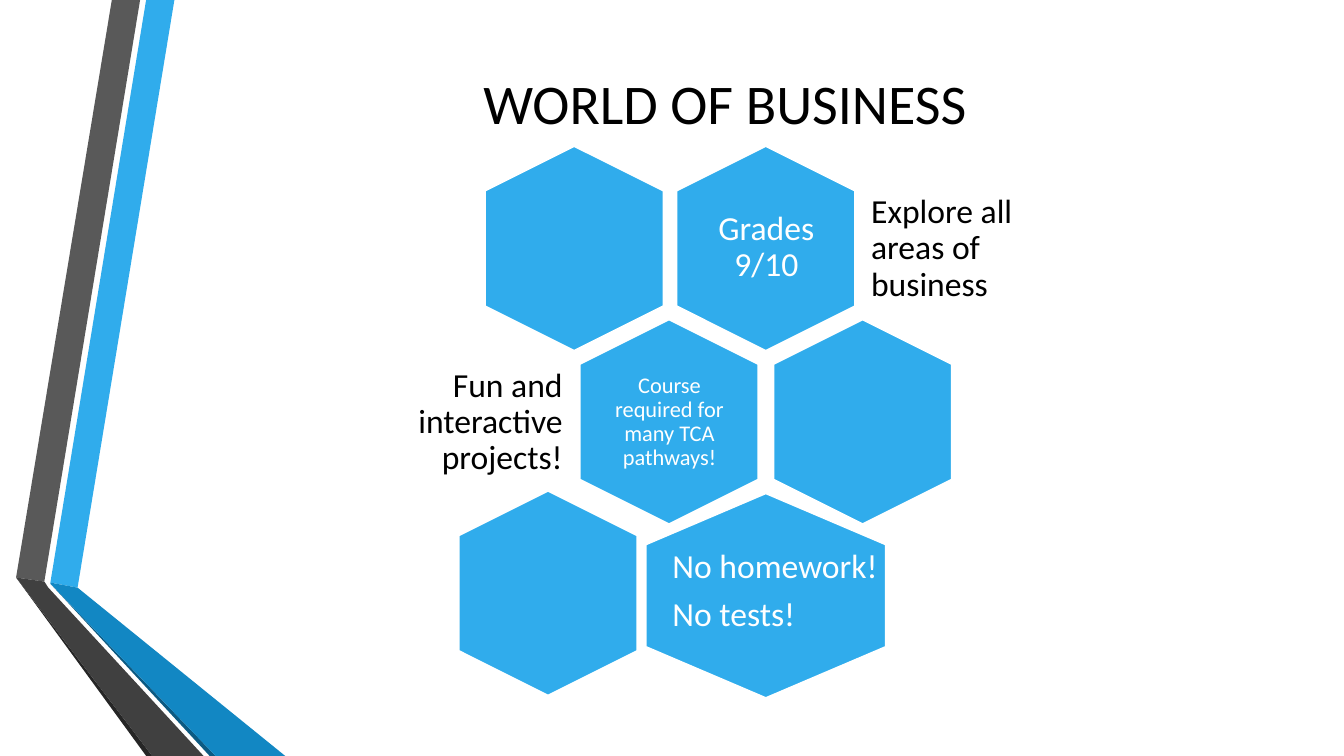
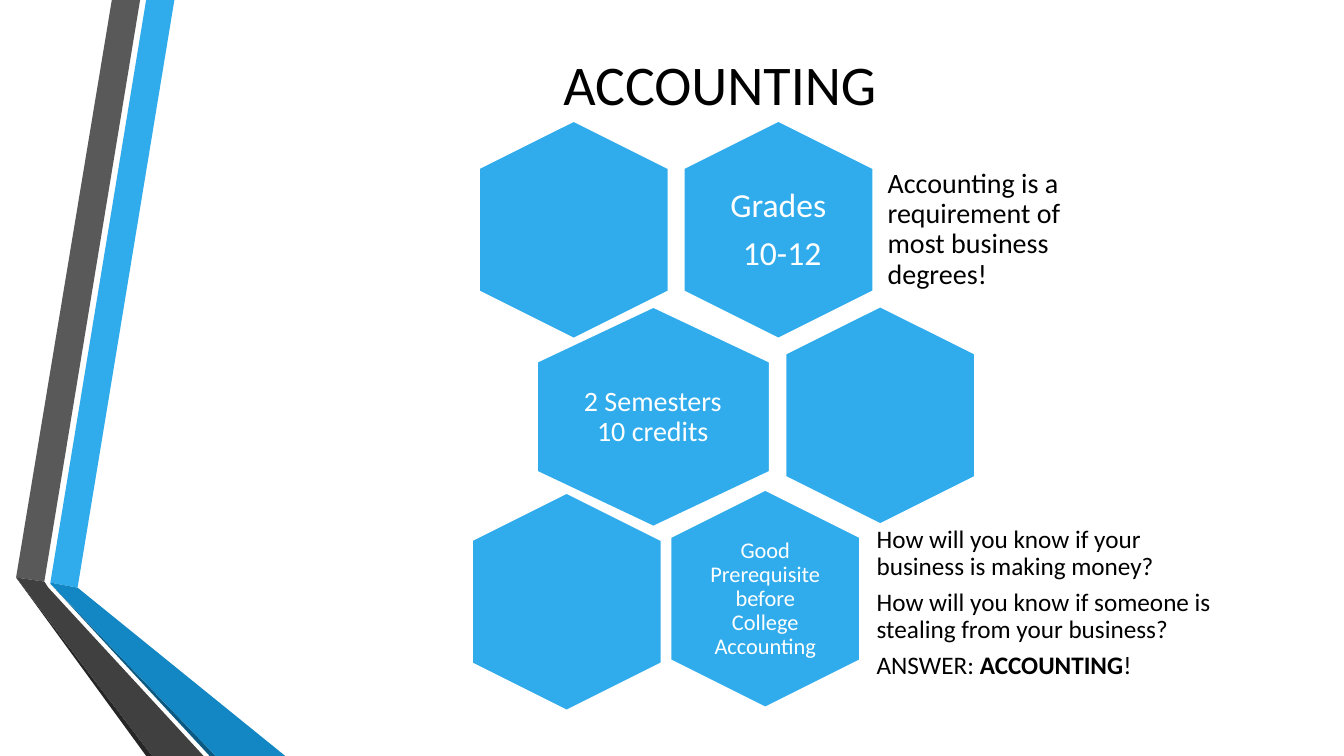
from dataclasses import dataclass

from pptx import Presentation
from pptx.dml.color import RGBColor
from pptx.enum.shapes import MSO_SHAPE as Preset
from pptx.enum.text import MSO_ANCHOR as Anchor, PP_ALIGN as Align
from pptx.shapes.autoshape import Shape
from pptx.slide import Slide
from pptx.util import Emu, Pt

PX = 9144  # EMU per px, 100 px to the inch
FONT = "Calibri"
TITLE_SIZE = 40
LABEL_SHARE = 0.69  # part of a hexagon that its label fills

BLACK = RGBColor(0x00, 0x00, 0x00)
WHITE = RGBColor(0xFF, 0xFF, 0xFF)
BLUE = RGBColor(0x30, 0xAC, 0xEC)
MID_BLUE = RGBColor(0x12, 0x87, 0xC3)
DEEP_BLUE = RGBColor(0x0C, 0x5A, 0x82)
GRAY = RGBColor(0x59, 0x59, 0x59)
DARK_GRAY = RGBColor(0x40, 0x40, 0x40)
CHARCOAL = RGBColor(0x26, 0x26, 0x26)


@dataclass(frozen=True)
class Box:
    left: int
    top: int
    width: int
    height: int

    def emu(self) -> tuple[Emu, Emu, Emu, Emu]:
        return (Emu(self.left * PX), Emu(self.top * PX),
                Emu(self.width * PX), Emu(self.height * PX))


@dataclass(frozen=True)
class Band:
    color: RGBColor
    points: tuple[tuple[int, int], ...]


@dataclass(frozen=True)
class Hexagon:
    center_x: int
    center_y: int
    width: int
    height: int
    label: tuple[str, ...] = ()
    size: int = 24


@dataclass(frozen=True)
class Note:
    box: Box
    paragraphs: tuple[str, ...]
    size: int = 24
    align: Align = Align.LEFT
    color: RGBColor = BLACK
    bold_word: str = ""


@dataclass(frozen=True)
class Page:
    title: str
    title_box: Box
    hexagons: tuple[Hexagon, ...]
    notes: tuple[Note, ...]


# Folded ribbons at the left edge
BANDS = (
    Band(BLUE, ((50, 578), (77, 583), (173, 0), (145, 0))),
    Band(GRAY, ((139, 0), (111, 0), (16, 573), (44, 577))),
    Band(CHARCOAL, ((16, 573), (145, 750), (151, 750))),
    Band(DEEP_BLUE, ((50, 579), (208, 750), (214, 750))),
    Band(MID_BLUE, ((50, 578), (50, 579), (214, 750), (283, 750), (77, 583))),
    Band(DARK_GRAY, ((16, 573), (151, 750), (202, 750), (48, 583), (44, 577))),
)

PAGES = (
    Page(
        "WORLD OF BUSINESS",
        Box(171, 29, 1096, 145),
        (
            Hexagon(760, 246, 177, 203, ("Grades 9/10",)),
            Hexagon(569, 246, 177, 203),
            Hexagon(664, 419, 177, 203,
                    ("Course required for many TCA pathways!",), 16),
            Hexagon(855, 419, 177, 203),
            Hexagon(760, 591, 238, 203),
            Hexagon(544, 588, 177, 203),
        ),
        (
            Note(Box(854, 186, 227, 122), ("Explore all areas of business",)),
            Note(Box(349, 358, 219, 122), ("Fun and interactive projects!",),
                 align=Align.RIGHT),
            Note(Box(657, 526, 227, 122), ("No homework!", "No tests!"),
                 color=WHITE),
        ),
    ),
    Page(
        "ACCOUNTING",
        Box(166, 21, 1096, 123),
        (
            Hexagon(772, 228, 188, 216, ("Grades", " 10-12")),
            Hexagon(569, 228, 188, 216),
            Hexagon(648, 414, 231, 218, ("2 Semesters 10 credits",), 20),
            Hexagon(873, 412, 188, 216),
            Hexagon(759, 594, 188, 216,
                    ("Good Prerequisite before College Accounting",), 16),
            Hexagon(562, 597, 188, 216),
        ),
        (
            Note(Box(872, 163, 241, 130),
                 ("Accounting is a requirement of most business degrees!",), 20),
            Note(Box(862, 499, 364, 199),
                 ("How will you know if your business is making money?",
                  "How will you know if someone is stealing from your business?",
                  "ANSWER: ACCOUNTING!"),
                 18, bold_word="ACCOUNTING"),
        ),
    ),
)


def centered_box(center_x: int, center_y: int, width: int, height: int) -> Box:
    return Box(round(center_x - width / 2), round(center_y - height / 2),
               width, height)


def paint(shape: Shape, color: RGBColor) -> None:
    shape.shadow.inherit = False
    shape.fill.solid()
    shape.fill.fore_color.rgb = color


def draw_bands(slide: Slide) -> None:
    for band in BANDS:
        builder = slide.shapes.build_freeform(*band.points[0], scale=PX)
        builder.add_line_segments(band.points[1:], close=True)
        shape = builder.convert_to_shape()
        paint(shape, band.color)
        shape.line.fill.background()


def draw_title(slide: Slide, page: Page) -> None:
    frame = slide.shapes.add_textbox(*page.title_box.emu()).text_frame
    frame.word_wrap = True
    frame.vertical_anchor = Anchor.MIDDLE
    paragraph = frame.paragraphs[0]
    paragraph.text = page.title
    paragraph.alignment = Align.CENTER
    paragraph.font.name = FONT
    paragraph.font.size = Pt(TITLE_SIZE)
    paragraph.font.color.rgb = BLACK


def draw_note(slide: Slide, note: Note) -> None:
    frame = slide.shapes.add_textbox(*note.box.emu()).text_frame
    frame.word_wrap = True
    frame.vertical_anchor = Anchor.MIDDLE
    # Margins and gaps grow with the text size
    margin = Pt(note.size * 0.3)
    frame.margin_left = frame.margin_right = margin
    frame.margin_top = frame.margin_bottom = margin
    for index, text in enumerate(note.paragraphs):
        paragraph = frame.add_paragraph() if index else frame.paragraphs[0]
        paragraph.alignment = note.align
        paragraph.line_spacing = 0.9
        paragraph.space_after = Pt(note.size * 0.35)
        paragraph.font.name = FONT
        paragraph.font.size = Pt(note.size)
        paragraph.font.color.rgb = note.color
        parts = text.partition(note.bold_word) if note.bold_word else (text,)
        for part in filter(None, parts):
            run = paragraph.add_run()
            run.text = part
            if part == note.bold_word:
                run.font.bold = True


def draw_hexagon(slide: Slide, hexagon: Hexagon) -> None:
    # The preset points sideways, so it is laid flat and turned upright
    box = centered_box(hexagon.center_x, hexagon.center_y,
                       hexagon.height, hexagon.width)
    shape = slide.shapes.add_shape(Preset.HEXAGON, *box.emu())
    shape.rotation = 90
    paint(shape, BLUE)
    shape.line.color.rgb = WHITE
    shape.line.width = Pt(1.25)
    if hexagon.label:
        label_box = centered_box(hexagon.center_x, hexagon.center_y,
                                 round(hexagon.width * LABEL_SHARE),
                                 round(hexagon.height * LABEL_SHARE))
        draw_note(slide, Note(label_box, hexagon.label, hexagon.size,
                              Align.CENTER, WHITE))


def main() -> None:
    presentation = Presentation()
    presentation.slide_width = Emu(1333 * PX)
    presentation.slide_height = Emu(750 * PX)
    blank_layout = presentation.slide_layouts[6]
    for page in PAGES:
        slide = presentation.slides.add_slide(blank_layout)
        draw_bands(slide)
        draw_title(slide, page)
        for hexagon in page.hexagons:
            draw_hexagon(slide, hexagon)
        for note in page.notes:
            draw_note(slide, note)
    presentation.save("out.pptx")


if __name__ == "__main__":
    main()
